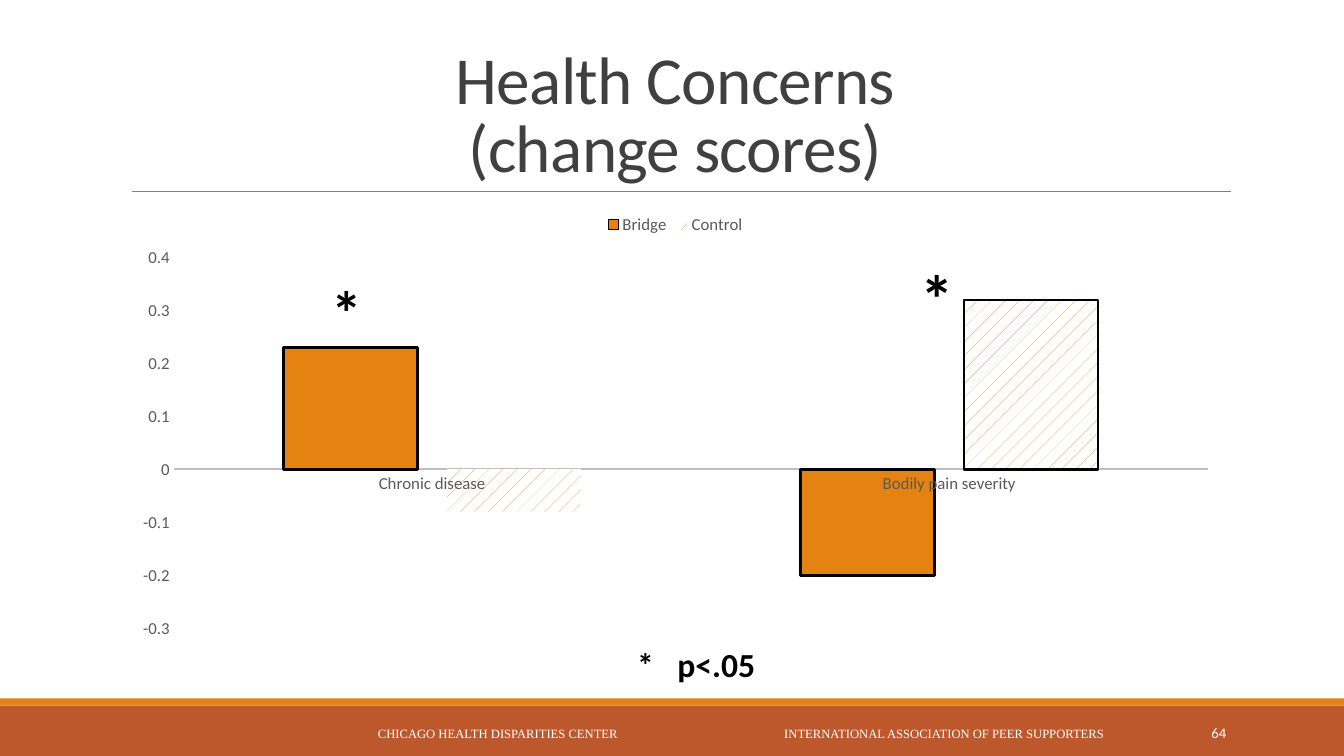
from lxml import etree
from pptx import Presentation
from pptx.chart.data import CategoryChartData
from pptx.dml.color import RGBColor
from pptx.enum.chart import XL_CHART_TYPE, XL_LEGEND_POSITION, XL_TICK_MARK
from pptx.enum.dml import MSO_PATTERN
from pptx.enum.shapes import MSO_CONNECTOR, MSO_SHAPE
from pptx.enum.text import MSO_ANCHOR, PP_ALIGN
from pptx.oxml.ns import qn
from pptx.util import Pt

PX = 9144
SLIDE_W, SLIDE_H = 1333, 750

RUST = RGBColor(0xBD, 0x58, 0x2C)
ORANGE = RGBColor(0xE4, 0x83, 0x12)
WHITE = RGBColor(0xFF, 0xFF, 0xFF)
BLACK = RGBColor(0, 0, 0)
TITLE_GRAY = RGBColor(0x40, 0x40, 0x40)
LABEL_GRAY = RGBColor(0x59, 0x59, 0x59)
RULE_GRAY = RGBColor(0x80, 0x80, 0x80)
AXIS_GRAY = RGBColor(0xBF, 0xBF, 0xBF)

SANS = "Calibri"
SERIF = "Times New Roman"
LEFT, CENTER, RIGHT = PP_ALIGN.LEFT, PP_ALIGN.CENTER, PP_ALIGN.RIGHT
TOP, MIDDLE, BOTTOM = MSO_ANCHOR.TOP, MSO_ANCHOR.MIDDLE, MSO_ANCHOR.BOTTOM
COLUMNS = XL_CHART_TYPE.COLUMN_CLUSTERED
LEGEND_TOP = XL_LEGEND_POSITION.TOP
NO_TICK = XL_TICK_MARK.NONE
DOTS = MSO_PATTERN.PERCENT_5
RECTANGLE = MSO_SHAPE.RECTANGLE
STRAIGHT = MSO_CONNECTOR.STRAIGHT


def emu(*lengths):
    return [length * PX for length in lengths]


def style_font(font, size, color, face=SANS, bold=False):
    font.size = Pt(size)
    font.color.rgb = color
    font.name = face
    font.bold = bold


def add_text(slide, box, lines, size, color, face=SANS, bold=False,
             align=LEFT, anchor=TOP, wrap=True, tab=None):
    frame = slide.shapes.add_textbox(*emu(*box)).text_frame
    frame.word_wrap = wrap
    frame.vertical_anchor = anchor
    paragraph = frame.paragraphs[0]
    paragraph.alignment = align
    for index, line in enumerate(lines):
        if index:
            paragraph.add_line_break()
        run = paragraph.add_run()
        run.text = line
        style_font(run.font, size, color, face, bold)
    if tab:
        stops = etree.SubElement(paragraph._p.get_or_add_pPr(), qn("a:tabLst"))
        etree.SubElement(stops, qn("a:tab"), pos=str(tab * PX), algn="l")
    return paragraph


def add_band(slide, box, color):
    band = slide.shapes.add_shape(RECTANGLE, *emu(*box))
    band.shadow.inherit = False
    band.fill.solid()
    band.fill.fore_color.rgb = color
    band.line.fill.background()


def add_header(slide, x, y, w, h):
    rule = slide.shapes.add_connector(
        STRAIGHT, *emu(x + 11, y + h, x + w + 1, y + h))
    rule.line.color.rgb = RULE_GRAY
    rule.line.width = Pt(0.5)
    etree.SubElement(rule._element.spPr, qn("a:effectLst"))
    title = add_text(slide, (x, y, w, h), ["Health Concerns", "(change scores)"],
                     48, TITLE_GRAY, align=CENTER, anchor=BOTTOM)
    title.line_spacing = 0.85
    for run in title.runs:
        run.font._element.set("spc", "-50")


def add_footer(slide, x, y, w, h):
    add_band(slide, (x, y + 7, w, h - 7), RUST)
    add_band(slide, (x, y, w, 7), ORANGE)
    add_text(slide, (x + 365, y + 13, 750, 44),
             ["CHICAGO HEALTH DISPARITIES CENTER\t"
              "INTERNATIONAL ASSOCIATION OF PEER SUPPORTERS"],
             9, WHITE, SERIF, anchor=MIDDLE, tab=403)
    add_text(slide, (x + 1083, y + 14, 143, 40), ["64"], 10.5, WHITE,
             align=RIGHT, anchor=MIDDLE)


def fill_dots(fill):
    fill.patterned()
    fill.pattern = DOTS
    fill.fore_color.rgb = ORANGE
    fill.back_color.rgb = WHITE


def outline(line):
    line.color.rgb = BLACK
    line.width = Pt(1.75)


def add_scores(slide, x, y, w, h):
    scores = CategoryChartData()
    scores.categories = ["Chronic disease", "Bodily pain severity"]
    scores.add_series("Bridge", (0.23, -0.2))
    scores.add_series("Control", (-0.08, 0.32))
    chart = slide.shapes.add_chart(COLUMNS, *emu(x, y, w, h), scores).chart
    style_font(chart.font, 10, BLACK)
    chart.has_title = False
    chart.has_legend = True
    chart.legend.position = LEGEND_TOP
    chart.legend.include_in_layout = False
    style_font(chart.legend.font, 12, LABEL_GRAY)

    concerns, change = chart.category_axis, chart.value_axis
    for axis in (concerns, change):
        axis.has_major_gridlines = False
        axis.major_tick_mark = axis.minor_tick_mark = NO_TICK
        style_font(axis.tick_labels.font, 12, LABEL_GRAY)
    concerns.format.line.color.rgb = AXIS_GRAY
    concerns.format.line.width = Pt(1.5)
    change.format.line.fill.background()

    plot = chart.plots[0]
    plot.vary_by_categories = False
    plot.gap_width, plot.overlap = 164, -22
    bridge, control = plot.series
    bridge.invert_if_negative = control.invert_if_negative = False
    bridge.format.fill.solid()
    bridge.format.fill.fore_color.rgb = ORANGE
    outline(bridge.format.line)
    fill_dots(control.format.fill)
    control.format.line.fill.background()
    pain = control.points[1].format
    fill_dots(pain.fill)
    outline(pain.line)

    add_text(slide, (x + 502, y + 432, 308, 50), ["*\tp<.05"], 24, BLACK,
             bold=True, tab=40)
    add_text(slide, (x + 199, y + 65, 116, 84), ["*"], 44, BLACK, bold=True)
    add_text(slide, (x + 783, y + 47, 54, 91), ["*"], 48, BLACK, bold=True,
             wrap=False)


def main():
    deck = Presentation()
    deck.slide_width, deck.slide_height = emu(SLIDE_W, SLIDE_H)
    slide = deck.slides.add_slide(deck.slide_layouts[6])
    add_header(slide, 120, 31, 1100, 159)
    add_footer(slide, 0, 693, SLIDE_W, SLIDE_H - 693)
    add_scores(slide, 120, 202, 1100, 440)
    deck.save("out.pptx")


if __name__ == "__main__":
    main()
